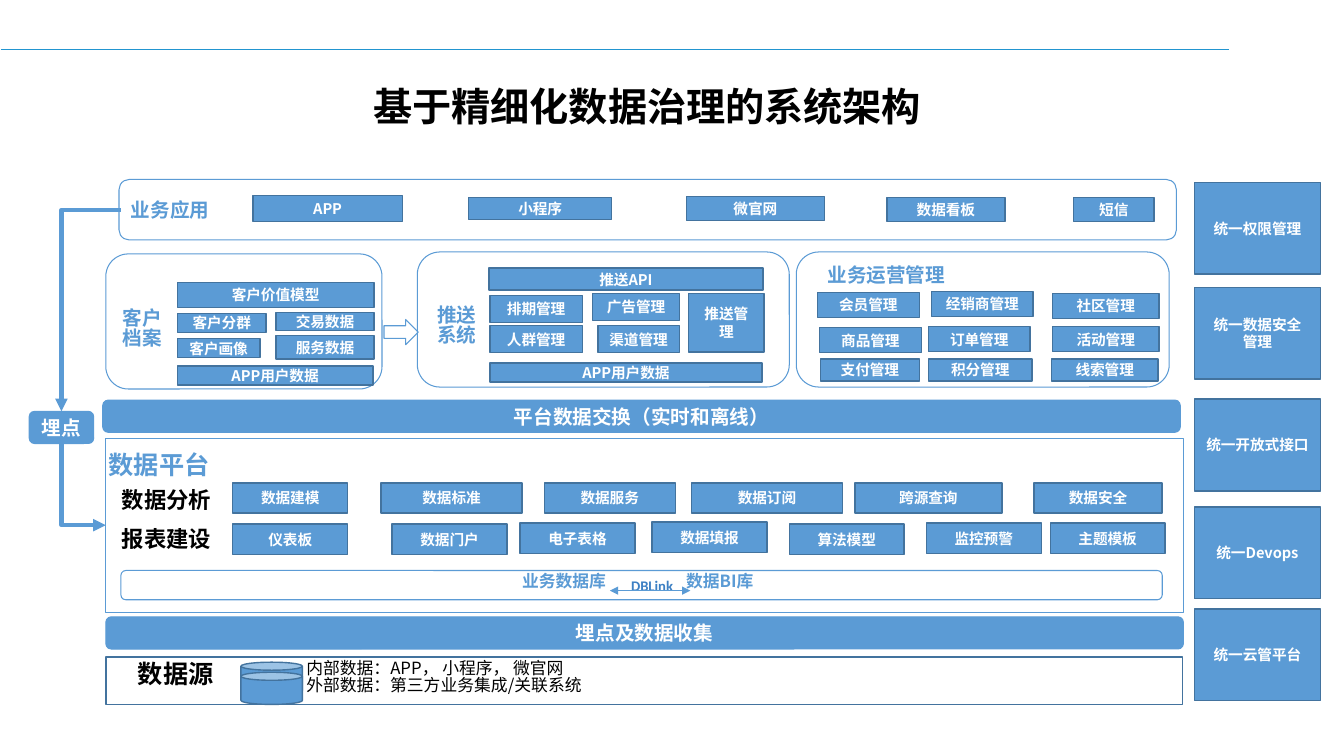
from lxml import etree
from pptx import Presentation
from pptx.dml.color import RGBColor
from pptx.enum.shapes import MSO_CONNECTOR, MSO_SHAPE
from pptx.enum.text import MSO_ANCHOR, PP_ALIGN
from pptx.oxml.ns import qn
from pptx.util import Pt

RECT, ROUNDED = MSO_SHAPE.RECTANGLE, MSO_SHAPE.ROUNDED_RECTANGLE
CAN, RIGHT_ARROW = MSO_SHAPE.CAN, MSO_SHAPE.RIGHT_ARROW
STRAIGHT, ELBOW = MSO_CONNECTOR.STRAIGHT, MSO_CONNECTOR.ELBOW
CENTER, LEFT = PP_ALIGN.CENTER, PP_ALIGN.LEFT
TOP, MIDDLE = MSO_ANCHOR.TOP, MSO_ANCHOR.MIDDLE
CJK = "Noto Sans CJK SC"
COLORS = {"blue": "5B9BD5", "edge": "43739E", "white": "FFFFFF", "black": "000000",
          "rule": "2295D0", "link": "3D80C4"}


def color(name):
    return RGBColor.from_string(COLORS[name])


def write(shape, text, size, ink, align=CENTER, anchor=MIDDLE, spacing=None, bold=True, font=CJK):
    frame = shape.text_frame
    frame.text = text
    frame.word_wrap = True
    frame.vertical_anchor = anchor
    for paragraph in frame.paragraphs:
        paragraph.alignment = align
        paragraph.line_spacing = spacing
        for run in paragraph.runs:
            run.font.size = Pt(size)
            run.font.bold = bold
            run.font.color.rgb = color(ink)
            run.font.name = font
            etree.SubElement(run._r.get_or_add_rPr(), qn("a:ea")).set("typeface", font)


prs = Presentation()
prs.slide_width, prs.slide_height = Pt(960), Pt(540)
slide = prs.slides.add_slide(prs.slide_layouts[5])
shapes = slide.shapes

title = shapes.title
title.left, title.top, title.width, title.height = Pt(208), Pt(60.5), Pt(508.5), Pt(41)
write(title, "基于精细化数据治理的系统架构", 28, "black", anchor=TOP, spacing=0.85)

blocks = [
    (RECT, 75.6, 469.4, 769, 33.8, "white", "edge", 1, ""),
    (CAN, 172.1, 473, 43.9, 23, "blue", "edge", 1, ""),
    (CAN, 172.1, 480.2, 43.9, 23, "blue", "edge", 1, ""),
    (RECT, 75.6, 313.2, 769.7, 124.6, None, "blue", 0.75, ""),
    (ROUNDED, 86.4, 407.5, 743.8, 20.9, None, "blue", 0.75, ""),
    (ROUNDED, 75.6, 440.6, 769.7, 23, "blue", "blue", 0.75, "埋点及数据收集"),
    (ROUNDED, 75.6, 181.4, 197.3, 96.5, None, "blue", 0.75, ""),
    (ROUNDED, 298.1, 180, 265.7, 96.5, None, "blue", 0.75, ""),
    (ROUNDED, 568.8, 180, 266.4, 96.5, None, "blue", 0.75, ""),
    (ROUNDED, 85, 128.2, 755.3, 43.2, None, "blue", 0.75, ""),
    (ROUNDED, 20.9, 293.8, 46.1, 23, "blue", "blue", 0.75, "埋点"),
    (ROUNDED, 73.4, 285.8, 769.7, 23, "blue", "blue", 0.75, "平台数据交换（实时和离线）"),
    (RIGHT_ARROW, 274.3, 228.2, 24.5, 18, None, "blue", 0.75, ""),
]

applications = [("APP", 180.7, 139.7, 106.6, 18.7), ("小程序", 334.8, 141.1, 102.2, 15.8),
                ("微官网", 490.3, 140.4, 98.6, 17.3), ("数据看板", 633.6, 141.1, 84.2, 17.3),
                ("短信", 766.8, 141.1, 57.6, 17.3)]
customers = [("客户价值模型", 126.7, 201.6, 140.4, 18), ("客户分群", 126.7, 223.9, 63.4, 13.7),
             ("交易数据", 197.3, 223.2, 69.8, 13), ("客户画像", 126.7, 241.9, 59, 13.7),
             ("服务数据", 197.3, 239.8, 69.8, 16.6), ("APP用户数据", 126.7, 261.4, 139.7, 13.7)]
pushes = [("推送API", 349.2, 191.5, 195.8, 15.8), ("排期管理", 349.9, 211, 66.2, 19.4),
          ("广告管理", 423.4, 209.5, 61.9, 19.4), ("推送管理", 491.8, 209.5, 54, 41.8),
          ("人群管理", 349.9, 232.6, 66.2, 19.4), ("渠道管理", 427, 232.6, 58.3, 19.4),
          ("APP用户数据", 349.9, 259.2, 194.4, 13.7)]
operations = [("会员管理", 583.9, 208.8, 72.7, 18), ("经销商管理", 665.3, 208.1, 72.7, 18),
              ("社区管理", 751.7, 209.5, 76.3, 18), ("商品管理", 585.4, 234, 72.7, 18),
              ("订单管理", 663.1, 233.3, 72.7, 18), ("活动管理", 751.7, 233.3, 76.3, 18),
              ("支付管理", 586.1, 256.3, 70.6, 15.8), ("积分管理", 663.1, 256.3, 74.2, 15.8),
              ("线索管理", 751, 256.3, 76.3, 15.8)]
analyses = [("数据建模", 166.3, 82.1), ("数据标准", 272.2, 100.8), ("数据服务", 388.8, 93.6),
            ("数据订阅", 493.9, 108), ("跨源查询", 610.6, 105.1), ("数据安全", 738.7, 91.4)]
reports = [("仪表板", 166.3, 374.4), ("数据门户", 280.1, 374.4), ("电子表格", 371.5, 373.7),
           ("数据填报", 465.8, 373), ("算法模型", 563.8, 374.4), ("监控预警", 661.7, 373.7),
           ("主题模板", 750.2, 373.7)]
services = [("统一权限管理", 130.3), ("统一数据安全\n管理", 205.2), ("统一开放式接口", 285.1),
            ("统一Devops", 362.2), ("统一云管平台", 434.9)]

chips = applications + customers + pushes + operations
chips += [(name, x, 345, width, 21.6) for name, x, width in analyses]
chips += [(name, x, y, 82.1, 21.6) for name, x, y in reports]
chips += [(name, 853.2, y, 90, 65.5) for name, y in services]

blocks = [block + (14,) for block in blocks]
blocks += [(RECT, x, y, w, h, "blue", "edge", 1, name, 10.5) for name, x, y, w, h in chips]

for kind, x, y, w, h, fill, edge, weight, text, size in blocks:
    block = shapes.add_shape(kind, Pt(x), Pt(y), Pt(w), Pt(h))
    block.shadow.inherit = False
    if fill:
        block.fill.solid()
        block.fill.fore_color.rgb = color(fill)
    else:
        block.fill.background()
    block.line.color.rgb = color(edge)
    block.line.width = Pt(weight)
    if text:
        write(block, text, size, "white")

labels = [
    ("业务应用", 86.4, 139.7, 78.5, 20.9, 14, "blue", 0.9),
    ("客户\n档案", 80.6, 217.4, 46.1, 35.3, 14, "blue", 0.85),
    ("推送\n系统", 305.3, 215.3, 50.4, 35.3, 14, "blue", 0.85),
    ("业务运营管理", 583.9, 185.8, 274.3, 20.9, 14, "blue", 0.9),
    ("数据平台", 70.6, 319.7, 165.6, 24.5, 18, "blue", 0.9),
    ("数据分析", 79.9, 345.6, 106.6, 23, 16, "black", 0.9),
    ("报表建设", 79.9, 373.7, 106.6, 23, 16, "black", 0.9),
    ("业务数据库", 365.8, 406, 80, 23, 12, "blue", 0.9),
    ("数据BI库", 483, 406, 80, 23, 12, "blue", 0.9),
    ("数据源", 91.4, 469.4, 114.5, 24.5, 18, "black", 0.9),
]
for text, x, y, w, h, size, ink, spacing in labels:
    label = shapes.add_textbox(Pt(x), Pt(y), Pt(w), Pt(h))
    write(label, text, size, ink, LEFT, TOP, spacing)

sources = shapes.add_textbox(Pt(211.7), Pt(469.4), Pt(526.3), Pt(36))
write(sources, "内部数据：APP， 小程序， 微官网\n外部数据：第三方业务集成/关联系统", 12, "black",
      LEFT, TOP, 0.8, False)

db_link = shapes.add_textbox(Pt(439.9), Pt(408.2), Pt(51.8), Pt(17.3))
write(db_link, "DBLink", 10.5, "link", anchor=TOP, font="Calibri")

lines = [
    (STRAIGHT, 0.7, 35.3, 877.7, 35.3, "rule", 0.25, (), 0),
    (STRAIGHT, 435.6, 421.9, 493.2, 421.9, "blue", 0.5, ("a:headEnd", "a:tailEnd"), 0),
    (ELBOW, 86.4, 149.8, 43.9, 293.8, "blue", 3, ("a:tailEnd",), 0),
    (ELBOW, 88.9, 330.1, 30.6, 361.8, "blue", 3, ("a:tailEnd",), 270),
]
for kind, x1, y1, x2, y2, ink, weight, arrowheads, turn in lines:
    line = shapes.add_connector(kind, Pt(x1), Pt(y1), Pt(x2), Pt(y2))
    line.line.color.rgb = color(ink)
    line.line.width = Pt(weight)
    properties = line._element.spPr
    if kind == ELBOW:
        properties.find(qn("a:prstGeom")).set("prst", "bentConnector2")
    if turn:
        properties.find(qn("a:xfrm")).set("rot", str(turn * 60000))
    for arrowhead in arrowheads:
        etree.SubElement(line.line._get_or_add_ln(), qn(arrowhead)).set("type", "triangle")
    etree.SubElement(properties, qn("a:effectLst"))

prs.save("out.pptx")
